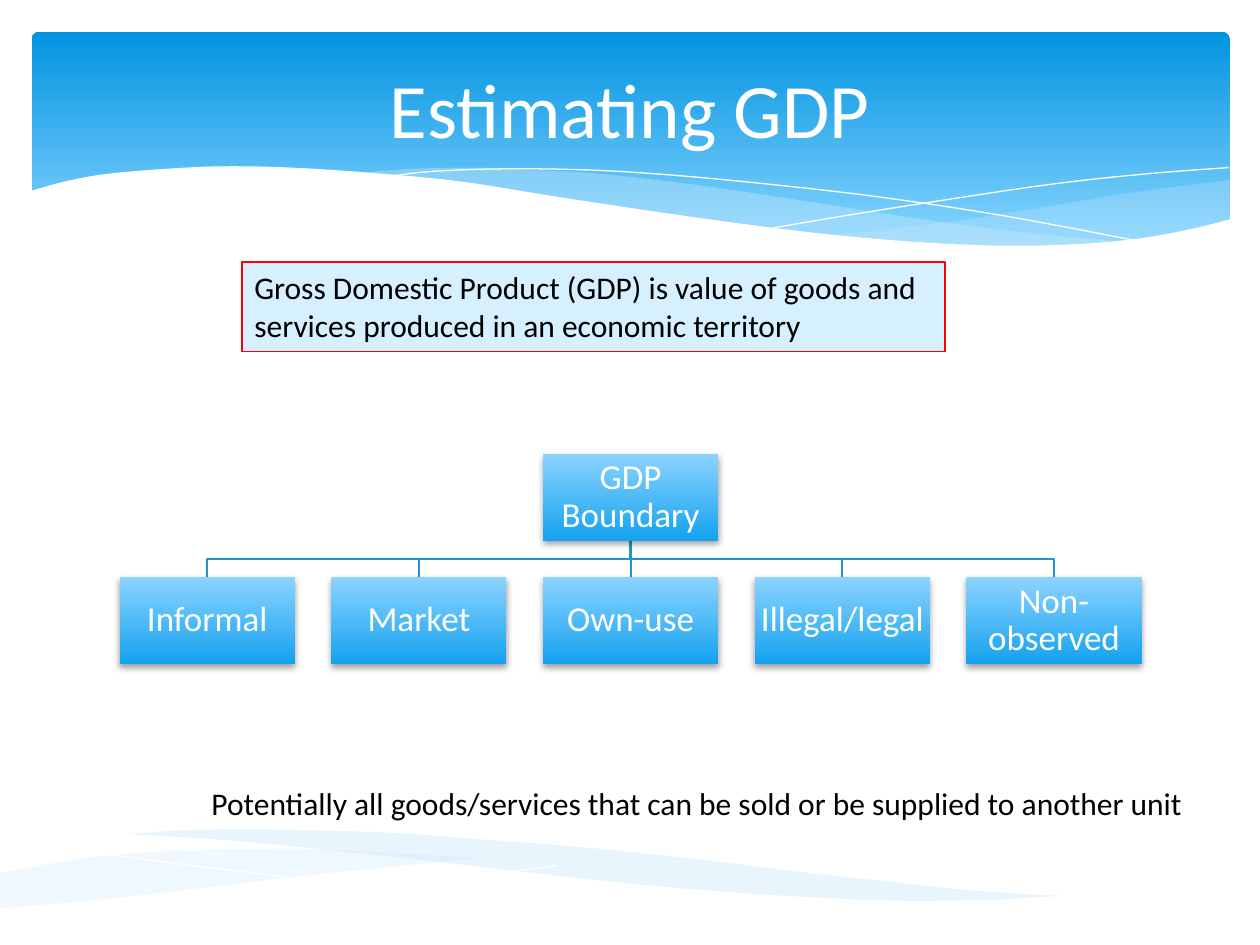
from pptx import Presentation
from pptx.dml.color import RGBColor
from pptx.enum.shapes import MSO_CONNECTOR, MSO_SHAPE
from pptx.enum.text import MSO_ANCHOR, MSO_AUTO_SIZE, PP_ALIGN
from pptx.oxml.ns import qn
from pptx.util import Inches, Pt
from lxml import etree

RECTANGLE = MSO_SHAPE.RECTANGLE
ROUNDED = MSO_SHAPE.ROUNDED_RECTANGLE
STRAIGHT = MSO_CONNECTOR.STRAIGHT
MIDDLE, TOP = MSO_ANCHOR.MIDDLE, MSO_ANCHOR.TOP
CENTER, LEFT = PP_ALIGN.CENTER, PP_ALIGN.LEFT
GROW = MSO_AUTO_SIZE.SHAPE_TO_FIT_TEXT

WHITE, BLACK, RED = "FFFFFF", "000000", "FF0000"
PALE_WAVE, PALE_BOX, BRANCH = "C6E7FC", "D6F0FF", "2792CB"
BANNER_STOPS = (("0293E0", 0), ("83D3FE", 0.9))
NODE_STOPS = (("8CD3FF", 0), ("14A2EF", 1))

BANNER_WAVES = [
    (29, [
        [(9.76, 1.43), (9.35, 1.48), (8.91, 1.54), (8.32, 1.64), (7.53, 1.76), (6.61, 1.87)],
        [(6.61, 1.87), (7.05, 1.91), (7.57, 1.94), (8.14, 1.96), (8.63, 1.94),
         (9.13, 1.89), (9.49, 1.82), (9.76, 1.75)],
    ]),
    (40, [
        [(8.93, 1.92), (8.37, 1.87), (7.75, 1.8), (7.06, 1.7), (6.29, 1.58), (5.69, 1.49),
         (5.14, 1.42), (4.65, 1.37), (4.2, 1.35), (3.8, 1.33), (3.28, 1.34), (2.86, 1.37)],
        [(2.86, 1.37), (3.62, 1.45), (4.49, 1.58), (5.3, 1.71), (6.01, 1.81), (6.65, 1.88),
         (7.22, 1.93), (7.73, 1.96), (8.28, 1.96), (8.93, 1.92)],
    ]),
]
BANNER_LINES = [
    [(3.09, 1.4), (3.44, 1.36), (4.01, 1.34), (4.69, 1.35), (5.33, 1.39), (6.08, 1.46),
     (6.95, 1.56), (7.95, 1.71), (9.07, 1.92)],
    [(6.13, 1.81), (6.72, 1.71), (7.48, 1.59), (8.36, 1.46), (9.1, 1.38), (9.75, 1.33)],
]
BANNER_EDGE = [
    [(9.77, 1.74), (9.4, 1.83), (8.99, 1.9), (8.5, 1.94), (7.93, 1.95), (7.26, 1.92),
     (6.48, 1.85), (5.55, 1.73), (4.47, 1.57), (3.65, 1.44), (2.92, 1.37), (2.3, 1.33),
     (1.77, 1.32), (1.32, 1.34), (0.85, 1.38), (0.52, 1.44), (0.23, 1.52)],
    [(0.23, 2.3), (9.77, 2.3)],
]
FOOTER_WAVES = [
    (40, [
        [(1.01, 6.62), (1.69, 6.66), (2.45, 6.73), (3.3, 6.82), (4.24, 6.93), (4.97, 7.01),
         (5.64, 7.07), (6.24, 7.11), (6.79, 7.14), (7.28, 7.15), (7.91, 7.14), (8.42, 7.11)],
        [(8.42, 7.11), (7.74, 7.07), (6.98, 6.99), (6.43, 6.93), (5.45, 6.81), (4.57, 6.72),
         (3.79, 6.66), (3.1, 6.61), (2.48, 6.59), (1.93, 6.58), (1.45, 6.59), (1.01, 6.62)],
    ]),
    (29, [
        [(0, 7.21), (0.68, 7.15), (1.41, 7.07), (2.41, 6.95), (3.3, 6.86), (3.84, 6.81)],
        [(3.84, 6.81), (3.14, 6.77), (2.53, 6.74), (1.98, 6.74), (1.49, 6.75),
         (0.96, 6.78), (0.49, 6.84), (0, 6.93)],
    ]),
]
FOOTER_LINES = [
    [(8.14, 7.24), (7.72, 7.27), (7.02, 7.29), (6.19, 7.28), (5.12, 7.23), (4.15, 7.16),
     (3.04, 7.05), (1.77, 6.9), (0.84, 6.78)],
    [(4.42, 6.87), (3.71, 6.96), (2.79, 7.07), (1.71, 7.19), (0.81, 7.26), (0.01, 7.3)],
]

CHILDREN = ["Informal", "Market", "Own-use", "Illegal/legal", "Non-observed"]
NODE_WIDTH, NODE_HEIGHT, NODE_STEP = 1.39, 0.69, 1.68
ROOT_TOP, CHILD_TOP, FIRST_LEFT = 3.6, 4.58, 0.95


def color(value):
    return RGBColor.from_string(value)


def smooth(knots, steps=5):
    padded = [knots[0], *knots, knots[-1]]
    points = [knots[0]]
    for a, b, c, d in zip(padded, padded[1:], padded[2:], padded[3:]):
        for step in range(1, steps + 1):
            t = step / steps
            points.append(tuple(
                q + t * (r - p) / 2 + t**2 * (2 * p - 5 * q + 4 * r - s) / 2
                + t**3 * (3 * q - p - 3 * r + s) / 2
                for p, q, r, s in zip(a, b, c, d)))
    return points


class Painter:
    font = "Calibri"

    def __init__(self, slide):
        self.shapes = slide.shapes

    def fill(self, shape, value, opacity=100):
        shape.fill.solid()
        shape.fill.fore_color.rgb = color(value)
        if opacity < 100:
            tint = shape.element.spPr.find(qn("a:solidFill"))[0]
            etree.SubElement(tint, qn("a:alpha"), val=str(opacity * 1000))

    def gradient(self, shape, stops):
        shape.fill.gradient()
        shape.fill.gradient_angle = 270
        for stop, (value, position) in zip(shape.fill.gradient_stops, stops):
            stop.color.rgb = color(value)
            stop.position = position

    def outline(self, shape, value, width):
        shape.line.color.rgb = color(value)
        shape.line.width = Pt(width)

    def cast_shadow(self, shape):
        effects = shape.element.spPr.find(qn("a:effectLst"))
        shadow = etree.SubElement(effects, qn("a:outerShdw"), blurRad=str(Pt(4)),
                                  dist=str(Pt(2)), dir="5400000", rotWithShape="0")
        tint = etree.SubElement(shadow, qn("a:srgbClr"), val=BLACK)
        etree.SubElement(tint, qn("a:alpha"), val="38000")

    def block(self, kind, *bounds):
        shape = self.shapes.add_shape(kind, *map(Inches, bounds))
        shape.shadow.inherit = False
        shape.line.fill.background()
        return shape

    def freeform(self, points, close):
        corners = [(Inches(x), Inches(y)) for x, y in points]
        builder = self.shapes.build_freeform(*corners[0])
        builder.add_line_segments(corners[1:], close=close)
        shape = builder.convert_to_shape()
        shape.shadow.inherit = False
        return shape

    def wave(self, edges, value, opacity=100):
        shape = self.freeform([point for edge in edges for point in smooth(edge)], True)
        self.fill(shape, value, opacity)
        shape.line.fill.background()

    def stroke(self, points, value, width):
        shape = self.freeform(points, False)
        shape.fill.background()
        self.outline(shape, value, width)

    def connector(self, x, top, bottom):
        line = self.shapes.add_connector(STRAIGHT, *map(Inches, (x, top, x, bottom)))
        self.outline(line, BRANCH, 1.25)
        etree.SubElement(line.element.spPr, qn("a:effectLst"))

    def label(self, shape, text, size, value, align=LEFT, anchor=TOP, wrap=True):
        frame = shape.text_frame
        frame.word_wrap = wrap
        frame.vertical_anchor = anchor
        para = frame.paragraphs[0]
        para.text = text
        para.alignment = align
        para.font.name = self.font
        para.font.size = Pt(size)
        para.font.color.rgb = color(value)
        return frame

    def text(self, bounds, *args, **style):
        return self.label(self.shapes.add_textbox(*map(Inches, bounds)), *args, **style)

    def node(self, left, top, name):
        shape = self.block(RECTANGLE, left, top, NODE_WIDTH, NODE_HEIGHT)
        self.gradient(shape, NODE_STOPS)
        self.cast_shadow(shape)
        frame = self.label(shape, name, 20, WHITE, CENTER, MIDDLE)
        frame.margin_left = frame.margin_right = Inches(0.01)
        frame.margin_top = frame.margin_bottom = Inches(0.01)
        frame.paragraphs[0].line_spacing = 0.9


def draw_background(painter):
    banner = painter.block(ROUNDED, 0.25, 0.25, 9.51, 1.82)
    banner.adjustments[0] = 0.034
    painter.gradient(banner, BANNER_STOPS)
    for waves, lines in ((BANNER_WAVES, BANNER_LINES), (FOOTER_WAVES, FOOTER_LINES)):
        for opacity, edges in waves:
            painter.wave(edges, PALE_WAVE, opacity)
        for knots in lines:
            painter.stroke(smooth(knots), WHITE, 0)
        if waves is BANNER_WAVES:
            painter.wave(BANNER_EDGE, WHITE)


def draw_hierarchy(painter):
    lefts = [FIRST_LEFT + NODE_STEP * index for index in range(len(CHILDREN))]
    root_left = lefts[len(lefts) // 2]
    root_x, root_bottom = root_left + NODE_WIDTH / 2, ROOT_TOP + NODE_HEIGHT
    bend = (root_bottom + CHILD_TOP) / 2
    for left in lefts:
        x = left + NODE_WIDTH / 2
        if left == root_left:
            painter.connector(x, root_bottom, CHILD_TOP)
        else:
            painter.stroke([(root_x, root_bottom), (root_x, bend), (x, bend), (x, CHILD_TOP)],
                           BRANCH, 1.25)
    painter.node(root_left, ROOT_TOP, "GDP Boundary")
    for left, name in zip(lefts, CHILDREN):
        painter.node(left, CHILD_TOP, name)


def main():
    deck = Presentation()
    deck.slide_width, deck.slide_height = Inches(10), Inches(7.5)
    painter = Painter(deck.slides.add_slide(deck.slide_layouts[6]))
    draw_background(painter)
    draw_hierarchy(painter)
    painter.text((0.5, 0.17, 9, 1.37), "Estimating GDP", 44, WHITE, align=CENTER, anchor=MIDDLE)
    note = painter.text(
        (1.58, 6.17, 8.24, 0.4),
        "Potentially all goods/services that can be sold or be supplied to another unit",
        18, BLACK, wrap=False)
    note.auto_size = GROW
    definition = painter.block(RECTANGLE, 1.92, 2.08, 5.58, 0.71)
    painter.fill(definition, PALE_BOX)
    painter.outline(definition, RED, 0.75)
    painter.label(
        definition,
        "Gross Domestic Product (GDP) is value of goods and services produced in an economic territory",
        18, BLACK).auto_size = GROW
    deck.save("out.pptx")


if __name__ == "__main__":
    main()
